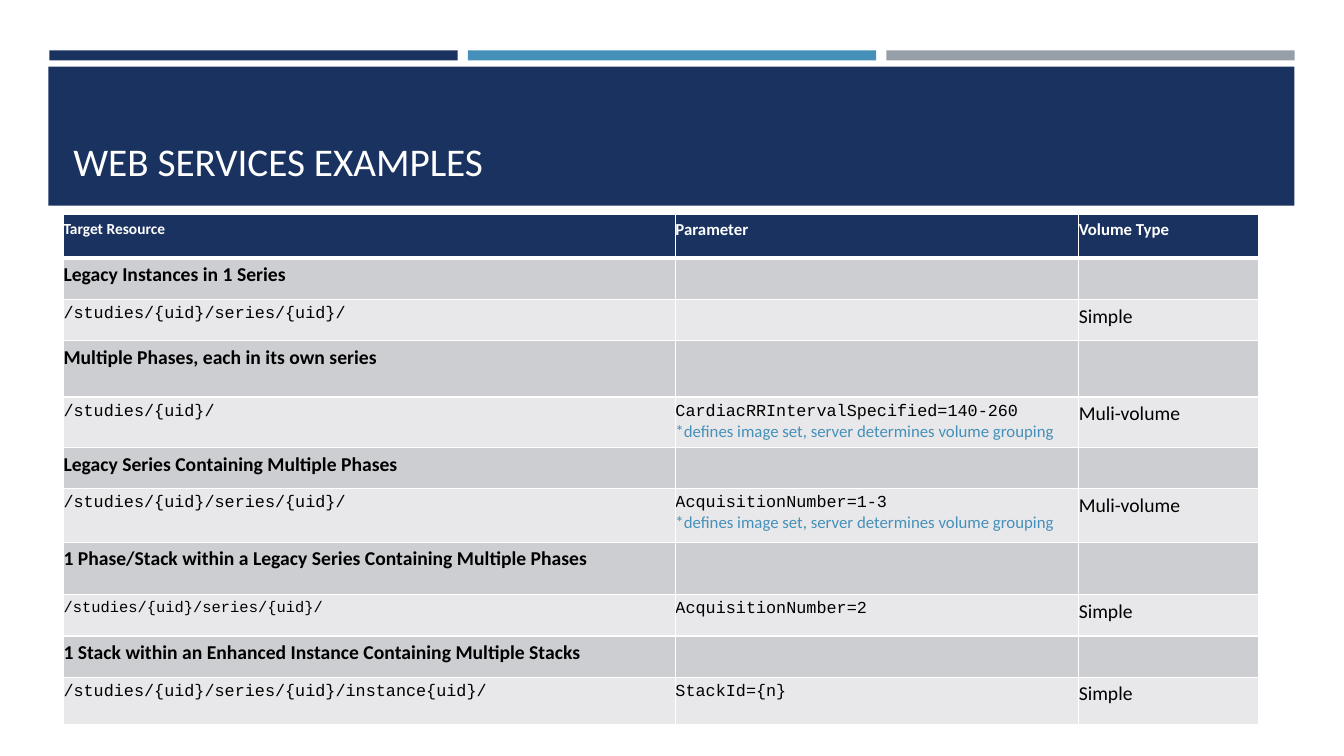
from pptx import Presentation
from pptx.dml.color import RGBColor
from pptx.enum.shapes import MSO_SHAPE
from pptx.enum.text import MSO_ANCHOR
from pptx.oxml import parse_xml
from pptx.oxml.ns import nsdecls
from pptx.util import Inches, Pt

RECT = MSO_SHAPE.RECTANGLE
BOTTOM = MSO_ANCHOR.BOTTOM


class Theme:
    NAVY, BLUE, GRAY = "1A3260", "4590B8", "969FA7"
    WHITE, BLACK = "FFFFFF", "000000"
    BAND_DARK, BAND_LIGHT = "CDCED2", "E8E8EA"
    BODY, CODE = "Calibri", "Courier New"
    TITLE_SIZE, LABEL_SIZE, TEXT_SIZE, SMALL_SIZE = 28, 14, 12, 11


def text_format(size, color=Theme.BLACK, name=Theme.BODY, bold=False):
    return {"size": Pt(size), "name": name, "bold": bold, "color": color}


TITLE = text_format(Theme.TITLE_SIZE, Theme.WHITE)
HEAD = text_format(Theme.TEXT_SIZE, Theme.WHITE, bold=True)
HEAD_SMALL = {**HEAD, "size": Pt(Theme.SMALL_SIZE)}
SECTION = text_format(Theme.LABEL_SIZE, bold=True)
CODE = text_format(Theme.TEXT_SIZE, name=Theme.CODE)
CODE_SMALL = {**CODE, "size": Pt(Theme.SMALL_SIZE)}
NOTE = text_format(Theme.TEXT_SIZE, Theme.BLUE)
VOLUME = text_format(Theme.LABEL_SIZE)


class SlideBuilder:
    def __init__(self, prs, theme):
        self.theme = theme
        self.slide = prs.slides.add_slide(prs.slide_layouts[6])

    def add_lines(self, tf, lines):
        """Add (text, format) pairs, one paragraph each."""
        for i, (text, fmt) in enumerate(lines):
            p = tf.add_paragraph() if i else tf.paragraphs[0]
            r = p.add_run()
            r.text = text
            for key, value in fmt.items():
                if key == "color":
                    r.font.color.rgb = RGBColor.from_string(value)
                else:
                    setattr(r.font, key, value)

    def bar(self, x, y, w, h, color):
        s = self.slide.shapes.add_shape(RECT, Inches(x), Inches(y), Inches(w), Inches(h))
        s.shadow.inherit = False
        s.fill.solid()
        s.fill.fore_color.rgb = RGBColor.from_string(color)
        s.line.fill.background()

    def title(self, x, y, w, h, text):
        sp = self.slide.shapes.add_textbox(Inches(x), Inches(y), Inches(w), Inches(h))
        tf = sp.text_frame
        tf.word_wrap = True
        tf.vertical_anchor = BOTTOM
        self.add_lines(tf, [(text, TITLE)])

    def cell(self, cell, lines, fill, bottom=1, top=1):
        margins = {"margin_left": 0, "margin_right": 0,
                   "margin_top": Inches(0.05), "margin_bottom": Inches(0.05)}
        for key, value in margins.items():
            setattr(cell, key, value)
        cell.fill.solid()
        cell.fill.fore_color.rgb = RGBColor.from_string(fill)
        tc_pr = cell._tc.get_or_add_tcPr()
        borders = (("L", 1), ("R", 1), ("T", top), ("B", bottom))
        for i, (side, width) in enumerate(borders):
            tc_pr.insert(i, parse_xml(
                f'<a:ln{side} {nsdecls("a")} w="{Pt(width)}"><a:solidFill>'
                f'<a:srgbClr val="{self.theme.WHITE}"/></a:solidFill></a:ln{side}>'))
        self.add_lines(cell.text_frame, lines)

    def table(self, x, y, widths, heights, rows):
        """Fill a table from (fill, cells) rows; the header has a thick rule below."""
        frame = self.slide.shapes.add_table(
            len(rows), len(widths), Inches(x), Inches(y),
            Inches(sum(widths)), Inches(sum(heights)))
        table = frame.table
        for column, width in zip(table.columns, widths):
            column.width = Inches(width)
        for i, (fill, cells) in enumerate(rows):
            table.rows[i].height = Inches(heights[i])
            for j, lines in enumerate(cells):
                self.cell(table.cell(i, j), lines, fill,
                          bottom=3 if i == 0 else 1, top=3 if i == 1 else 1)


GROUPING_NOTE = ("*defines image set, server determines volume grouping", NOTE)
SERIES = "/studies/{uid}/series/{uid}/"

# Section heading, resource, resource format, parameter lines, volume type
EXAMPLES = [
    ("Legacy Instances in 1 Series", SERIES, CODE, [], "Simple"),
    ("Multiple Phases, each in its own series", "/studies/{uid}/", CODE,
     [("CardiacRRIntervalSpecified=140-260", CODE), GROUPING_NOTE], "Muli-volume"),
    ("Legacy Series Containing Multiple Phases", SERIES, CODE,
     [("AcquisitionNumber=1-3", CODE), GROUPING_NOTE], "Muli-volume"),
    ("1 Phase/Stack within a Legacy Series Containing Multiple Phases", SERIES, CODE_SMALL,
     [("AcquisitionNumber=2", CODE)], "Simple"),
    ("1 Stack within an Enhanced Instance Containing Multiple Stacks",
     "/studies/{uid}/series/{uid}/instance{uid}/", CODE,
     [("StackId={n}", CODE)], "Simple"),
]
COLUMN_WIDTHS = [6.07, 4, 1.78]
ROW_HEIGHTS = [0.43, 0.41, 0.41, 0.56, 0.5, 0.41, 0.53, 0.52, 0.41, 0.41, 0.47]


def main():
    prs = Presentation()
    prs.slide_width, prs.slide_height = Inches(13.33), Inches(7.5)
    theme = Theme()
    page = SlideBuilder(prs, theme)

    # Three accent bars above the title band
    for i, color in enumerate((theme.NAVY, theme.BLUE, theme.GRAY)):
        page.bar(0.49 + i * 4.15, 0.5, 4.05, 0.1, color)

    # Title band
    page.bar(0.48, 0.66, 12.36, 1.38, theme.NAVY)
    page.title(0.63, 0.8, 12.06, 1.08, "WEB SERVICES EXAMPLES")

    # Table of requests, grouped by section
    rows = [(theme.NAVY, [[("Target Resource", HEAD_SMALL)],
                          [("Parameter", HEAD)], [("Volume Type", HEAD)]])]
    for section, resource, fmt, parameter, volume in EXAMPLES:
        rows.append((theme.BAND_DARK, [[(section, SECTION)], [], []]))
        rows.append((theme.BAND_LIGHT,
                     [[(resource, fmt)], parameter, [(volume, VOLUME)]]))
    page.table(0.63, 2.13, COLUMN_WIDTHS, ROW_HEIGHTS, rows)

    prs.save("out.pptx")


if __name__ == "__main__":
    main()
